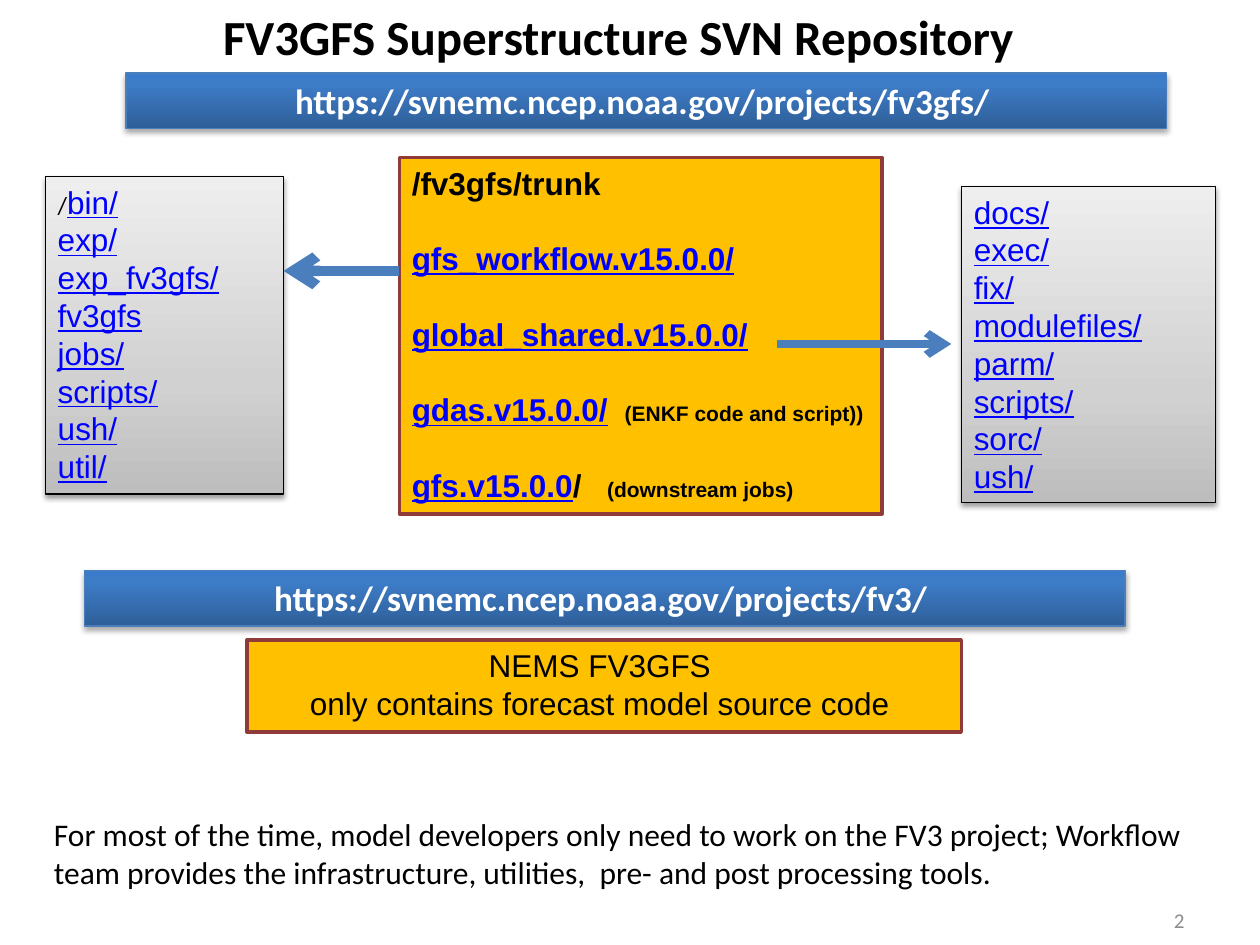
from copy import deepcopy

from lxml.etree import SubElement
from pptx import Presentation
from pptx.dml.color import RGBColor
from pptx.enum.shapes import MSO_CONNECTOR as CONNECTOR, MSO_SHAPE as SHAPE
from pptx.enum.text import MSO_ANCHOR as ANCHOR, PP_ALIGN as ALIGN
from pptx.oxml.ns import qn
from pptx.util import Inches, Pt

COLORS = {
    "black": "000000", "white": "FFFFFF", "link": "0000FF", "grey": "8C8C8C",
    "amber": "FFC000", "maroon": "8E3B39", "blue": "4B7EBC",
}
# Gradient stops run from the bottom of a shape to its top
BAR_STOPS = [(0, "2F5F99"), (0.8, "3D7CC7"), (1, "3A7CCB")]
LIST_STOPS = [(0, "BDBDBD"), (0.35, "D1D1D1"), (1, "EEEEEE")]
LINE_PITCH = 21.6

LEFT_FOLDERS = ["bin/", "exp/", "exp_fv3gfs/", "fv3gfs", "jobs/", "scripts/", "ush/", "util/"]
RIGHT_FOLDERS = ["docs/", "exec/", "fix/", "modulefiles/", "parm/", "scripts/", "sorc/", "ush/"]
# Link, text after it, small note, tab stop of the note in inches
TRUNK_FOLDERS = [
    ("gfs_workflow.v15.0.0/", "", "", 0),
    ("global_shared.v15.0.0/", "", "", 0),
    ("gdas.v15.0.0/", "", "(ENKF code and script))", 1.69),
    ("gfs.v15.0.0", "/", "(downstream jobs)", 1.55),
]


def rgb(name):
    return RGBColor.from_string(COLORS[name])


def style(font, size, color="black", name="Arial", bold=False, underline=False):
    font.size, font.name = Pt(size), name
    font.bold, font.underline = bold, underline
    font.color.rgb = rgb(color)


def add_run(paragraph, text, size, **look):
    run = paragraph.add_run()
    run.text = text
    style(run.font, size, **look)


def add_lines(frame, lines, size, align=ALIGN.LEFT, pitch=None, **look):
    """Write one paragraph per line, all in the same look."""
    for i, line in enumerate(lines):
        paragraph = frame.paragraphs[0] if i == 0 else frame.add_paragraph()
        paragraph.text, paragraph.alignment = line, align
        if pitch:
            paragraph.line_spacing = Pt(pitch)
        style(paragraph.font, size, **look)


def add_box(slide, place, line, width):
    box = slide.shapes.add_shape(SHAPE.RECTANGLE, *map(Inches, place))
    box.shadow.inherit = False
    box.line.color.rgb, box.line.width = rgb(line), Pt(width)
    box.text_frame.word_wrap = True
    box.text_frame.vertical_anchor = ANCHOR.TOP
    return box


def add_amber_box(slide, place):
    box = add_box(slide, place, "maroon", 2)
    box.fill.solid()
    box.fill.fore_color.rgb = rgb("amber")
    return box


def add_gradient_box(slide, place, line, stops, shadow_alpha):
    box = add_box(slide, place, line, 0.75)
    box.fill.gradient()
    box.fill.gradient_angle = 90
    props = box.element.spPr
    stop_list = props.find(qn("a:gradFill")).find(qn("a:gsLst"))
    stop_list.append(deepcopy(stop_list[-1]))
    for stop, (position, color) in zip(box.fill.gradient_stops, stops):
        stop.position = position
        stop.color.rgb = RGBColor.from_string(color)
    # Soft shadow straight below
    shadow = SubElement(props.find(qn("a:effectLst")), qn("a:outerShdw"),
                        blurRad=str(Pt(3.1)), dist=str(Pt(1.8)), dir="5400000",
                        rotWithShape="0")
    color = SubElement(shadow, qn("a:srgbClr"), val=COLORS["black"])
    SubElement(color, qn("a:alpha"), val=str(shadow_alpha * 1000))
    return box


def add_url_bar(slide, left, top, url):
    bar = add_gradient_box(slide, (left, top, 8.26, 0.44), "blue", BAR_STOPS, 35)
    add_lines(bar.text_frame, [url], 20, ALIGN.CENTER,
              color="white", name="Calibri", bold=True)


def add_folder_list(slide, place, folders, prefix=""):
    panel = add_gradient_box(slide, place, "black", LIST_STOPS, 38)
    frame = panel.text_frame
    look = dict(color="link", underline=True)
    if not prefix:
        add_lines(frame, folders, 18, pitch=LINE_PITCH, **look)
        return
    add_lines(frame, [""] + folders[1:], 18, pitch=LINE_PITCH, **look)
    first = frame.paragraphs[0]
    add_run(first, prefix, 14, name="Calibri")
    add_run(first, folders[0], 18, **look)


def add_trunk(slide):
    frame = add_amber_box(slide, (3.17, 1.25, 3.83, 2.83)).text_frame
    add_lines(frame, ["/fv3gfs/trunk"], 18, pitch=LINE_PITCH, bold=True)
    for link, after, note, stop in TRUNK_FOLDERS:
        paragraph = frame.add_paragraph()
        paragraph.alignment = ALIGN.LEFT
        paragraph.line_spacing = paragraph.space_before = Pt(LINE_PITCH)
        add_run(paragraph, link, 18, color="link", bold=True, underline=True)
        if after:
            add_run(paragraph, after, 18, bold=True)
        if note:
            tabs = SubElement(paragraph._p.get_or_add_pPr(), qn("a:tabLst"))
            SubElement(tabs, qn("a:tab"), pos=str(Inches(stop)), algn="l")
            add_run(paragraph, "\t" + note, 12, bold=True)


def add_arrow(slide, start, end, y, width):
    arrow = slide.shapes.add_connector(
        CONNECTOR.STRAIGHT, Inches(start), Inches(y), Inches(end), Inches(y))
    arrow.line.color.rgb, arrow.line.width = rgb("blue"), Pt(width)
    SubElement(arrow.line._get_or_add_ln(), qn("a:tailEnd"), type="arrow")
    SubElement(arrow.element.spPr, qn("a:effectLst"))


def add_text(slide, place, text, size, align=ALIGN.LEFT, anchor=ANCHOR.TOP, color="black"):
    frame = slide.shapes.add_textbox(*map(Inches, place)).text_frame
    frame.word_wrap = True
    frame.vertical_anchor = anchor
    add_lines(frame, [text], size, align, color=color, name="Calibri")


def set_title(slide, text):
    title = slide.shapes.title
    title.left, title.top, title.width, title.height = map(Inches, (1.67, 0, 6.52, 0.57))
    title.text_frame.word_wrap = False
    title.text_frame.vertical_anchor = ANCHOR.TOP
    add_lines(title.text_frame, [text], 28, name="Calibri", bold=True)


def main():
    deck = Presentation()
    deck.slide_width, deck.slide_height = Inches(10), Inches(7.5)
    slide = deck.slides.add_slide(deck.slide_layouts[5])
    set_title(slide, "FV3GFS Superstructure SVN Repository")

    # Workflow project: trunk with its folder lists
    add_url_bar(slide, 1, 0.58, "https://svnemc.ncep.noaa.gov/projects/fv3gfs/ ")
    add_trunk(slide)
    add_folder_list(slide, (7.63, 1.48, 2.02, 2.51), RIGHT_FOLDERS)
    add_folder_list(slide, (0.36, 1.4, 1.89, 2.52), LEFT_FOLDERS, prefix="/")
    add_arrow(slide, 3.17, 2.25, 2.15, 6)
    add_arrow(slide, 6.17, 7.55, 2.73, 4.5)

    # Forecast model project
    add_url_bar(slide, 0.67, 4.53, "https://svnemc.ncep.noaa.gov/projects/fv3/ ")
    model = add_amber_box(slide, (1.96, 5.08, 5.67, 0.73))
    add_lines(model.text_frame,
              ["NEMS FV3GFS ", "only contains forecast model source code "],
              18, ALIGN.CENTER, pitch=LINE_PITCH)

    # Closing remark and slide number
    add_text(slide, (0.33, 6.42, 9.53, 0.71),
             "For most of the time, model developers only need to work on the FV3 project; "
             "Workflow team provides the infrastructure, utilities,  pre- and post "
             "processing tools.", 18)
    add_text(slide, (7.17, 7.1, 2.33, 0.4), "2", 12, ALIGN.RIGHT, ANCHOR.MIDDLE, "grey")
    deck.save("out.pptx")


if __name__ == "__main__":
    main()
